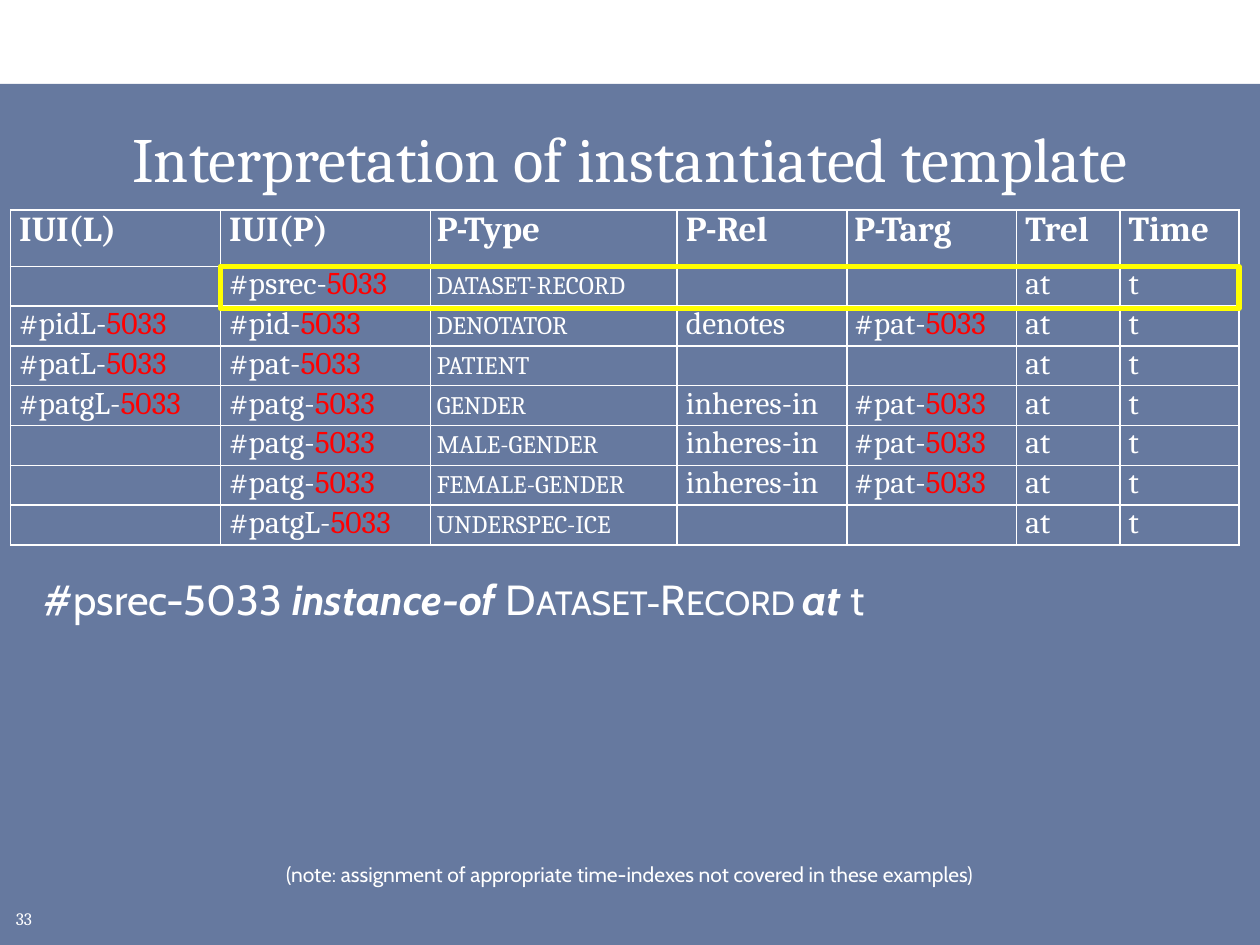
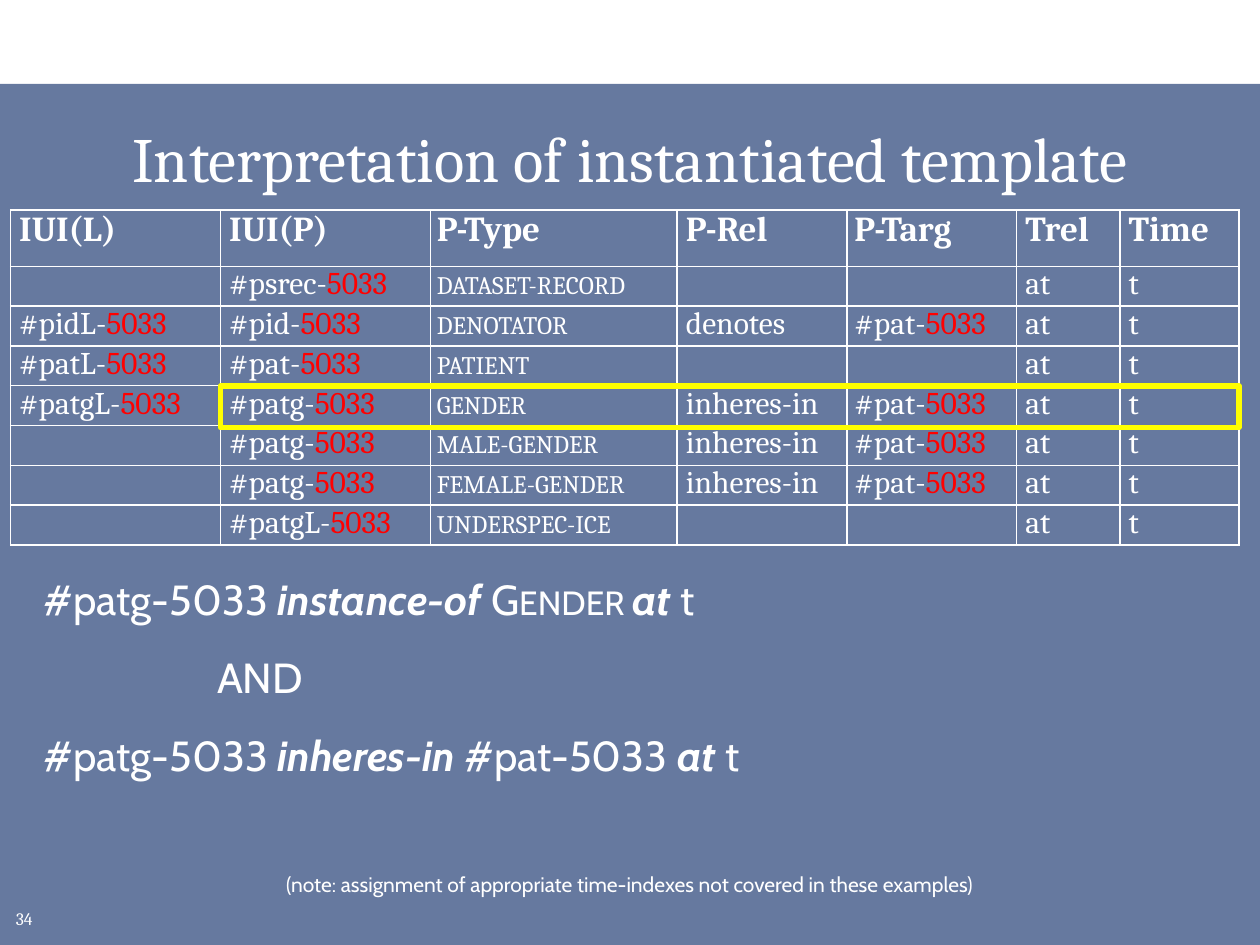
from dataclasses import dataclass

from lxml import etree
from pptx import Presentation
from pptx.dml.color import RGBColor
from pptx.enum import shapes, text
from pptx.oxml import ns
from pptx.util import Pt


@dataclass(frozen=True)
class Theme:
    white: str = "FFFFFF"
    navy: str = "002060"
    red: str = "FF0000"
    yellow: str = "FFFF00"
    serif: str = "Cambria"
    sans: str = "Cabin"
    title: int = 36
    statement: int = 24
    header: int = 20
    cell: int = 18
    note: int = 12
    number: int = 10


THEME = Theme()
RECORD_ID = "5033"
TITLE = "Interpretation of instantiated template"
NOTE = "(note: assignment of appropriate time-indexes not covered in these examples)"

TABLE_LEFT, TABLE_TOP = 6, 120
COLUMN_WIDTHS = [120, 120, 141, 97, 97, 59, 68]
CELL_MARGINS = [5, 5, 3.6, 5, 4.3, 5, 5]
HEADER_HEIGHT, ROW_HEIGHT = 32.25, 22.75
TYPE_COLUMN = 2
HEADERS = ["IUI(L)", "IUI(P)", "P-Type", "P-Rel", "P-Targ", "Trel", "Time"]
TUPLES = [
    ("", "#psrec-5033", "dataset-record", "", ""),
    ("#pidL-5033", "#pid-5033", "denotator", "denotes", "#pat-5033"),
    ("#patL-5033", "#pat-5033", "patient", "", ""),
    ("#patgL-5033", "#patg-5033", "gender", "inheres-in", "#pat-5033"),
    ("", "#patg-5033", "male-gender", "inheres-in", "#pat-5033"),
    ("", "#patg-5033", "female-gender", "inheres-in", "#pat-5033"),
    ("", "#patgL-5033", "underspec-ice", "", ""),
]

PLAIN, RELATION, CLASS = "plain", "relation", "class"
AT_T = [("at", RELATION), (" t", PLAIN)]


def add_run(paragraph, words, size, font, color=THEME.white, bold=False, italic=False, small_caps=False):
    run = paragraph.add_run()
    run.text = words
    run.font.size = Pt(size)
    run.font.name = font
    run.font.bold = bold
    run.font.italic = italic
    run.font.color.rgb = RGBColor.from_string(color)
    if small_caps:
        run._r.get_or_add_rPr().set("cap", "small")


def add_text_box(slide, left, top, width, height, anchor=text.MSO_ANCHOR.MIDDLE, wrap=True):
    frame = slide.shapes.add_textbox(Pt(left), Pt(top), Pt(width), Pt(height)).text_frame
    frame.word_wrap = wrap
    frame.vertical_anchor = anchor
    return frame


def add_rectangle(slide, left, top, width, height):
    rectangle = slide.shapes.add_shape(
        shapes.MSO_SHAPE.RECTANGLE, Pt(left), Pt(top), Pt(width), Pt(height))
    rectangle.shadow.inherit = False
    return rectangle


def add_frame(slide, number):
    band = add_rectangle(slide, 0, 48, 720, 492)
    band.fill.solid()
    band.fill.fore_color.rgb = RGBColor.from_string(THEME.navy)
    color = band.fill._xPr.find(".//" + ns.qn("a:srgbClr"))
    etree.SubElement(color, ns.qn("a:alpha"), val="60000")
    band.line.fill.background()

    page = add_text_box(slide, 2, 516, 28, 18, wrap=False)
    add_run(page.paragraphs[0], str(number), THEME.number, THEME.serif)

    heading = add_text_box(slide, 18, 60, 684, 60).paragraphs[0]
    heading.alignment = text.PP_ALIGN.CENTER
    add_run(heading, TITLE, THEME.title, THEME.serif)


def set_borders(cell):
    properties = cell._tc.get_or_add_tcPr()
    for position, side in enumerate(("lnL", "lnR", "lnT", "lnB")):
        border = etree.Element(ns.qn(f"a:{side}"), w=str(Pt(1)))
        fill = etree.SubElement(border, ns.qn("a:solidFill"))
        etree.SubElement(fill, ns.qn("a:srgbClr"), val=THEME.white)
        properties.insert(position, border)


def fill_cell(cell, words, column, is_header):
    cell.fill.background()
    cell.margin_left = cell.margin_right = Pt(CELL_MARGINS[column])
    cell.margin_top = cell.margin_bottom = 0
    set_borders(cell)
    paragraph = cell.text_frame.paragraphs[0]
    if is_header:
        add_run(paragraph, words, THEME.header, THEME.serif, bold=True)
        return
    paragraph.font.size = Pt(THEME.cell)
    prefix, record, _ = words.partition(RECORD_ID)
    if prefix:
        add_run(paragraph, prefix, THEME.cell, THEME.serif, small_caps=column == TYPE_COLUMN)
    if record:
        add_run(paragraph, record, THEME.cell, THEME.serif, THEME.red)


def add_template_table(slide):
    rows = [HEADERS] + [(*entry, "at", "t") for entry in TUPLES]
    heights = [HEADER_HEIGHT] + [ROW_HEIGHT] * len(TUPLES)
    table = slide.shapes.add_table(
        len(rows), len(HEADERS), Pt(TABLE_LEFT), Pt(TABLE_TOP),
        Pt(sum(COLUMN_WIDTHS)), Pt(sum(heights))).table
    table.first_row = table.horz_banding = False
    for column, width in zip(table.columns, COLUMN_WIDTHS):
        column.width = Pt(width)
    for row, height in zip(table.rows, heights):
        row.height = Pt(height)
    for r, row in enumerate(rows):
        for c, words in enumerate(row):
            fill_cell(table.cell(r, c), words, c, r == 0)


def add_highlight(slide, entry):
    outline = add_rectangle(
        slide, TABLE_LEFT + COLUMN_WIDTHS[0], TABLE_TOP + HEADER_HEIGHT + entry * ROW_HEIGHT,
        sum(COLUMN_WIDTHS[1:]), 24)
    outline.fill.background()
    outline.line.color.rgb = RGBColor.from_string(THEME.yellow)
    outline.line.width = Pt(3)


def add_reading(slide, statements, note_gap):
    frame = add_text_box(slide, 18, 324, 684, 198, text.MSO_ANCHOR.TOP)
    for index, (indent, parts) in enumerate(statements):
        paragraph = frame.add_paragraph() if index else frame.paragraphs[0]
        paragraph._p.get_or_add_pPr().set("marL", str(Pt(indent)))
        if index:
            paragraph.space_before = Pt(16)
        for words, style in parts:
            add_run(paragraph, words, THEME.statement, THEME.sans, bold=style == RELATION,
                    italic=style == RELATION, small_caps=style == CLASS)
    note = frame.add_paragraph()
    note.alignment = text.PP_ALIGN.CENTER
    note.space_before = Pt(note_gap)
    add_run(note, NOTE, THEME.note, THEME.sans)


def instance_of(subject, kind):
    return [(f"{subject} ", PLAIN), ("instance-of ", RELATION), (f"{kind} ", CLASS), *AT_T]


def main():
    presentation = Presentation()
    presentation.slide_width, presentation.slide_height = Pt(720), Pt(540)
    inherence = [("#patg-5033 ", PLAIN), ("inheres-in ", RELATION), ("#pat-5033 ", PLAIN), *AT_T]
    readings = [
        (33, 0, [(0, instance_of("#psrec-5033", "Dataset-Record"))], 136),
        (34, 3, [(0, instance_of("#patg-5033", "Gender")),
                 (99, [("AND", PLAIN)]),
                 (0, inherence)], 52),
    ]
    for number, entry, statements, note_gap in readings:
        slide = presentation.slides.add_slide(presentation.slide_layouts[6])
        add_frame(slide, number)
        add_reading(slide, statements, note_gap)
        add_template_table(slide)
        add_highlight(slide, entry)
    presentation.save("out.pptx")


if __name__ == "__main__":
    main()
